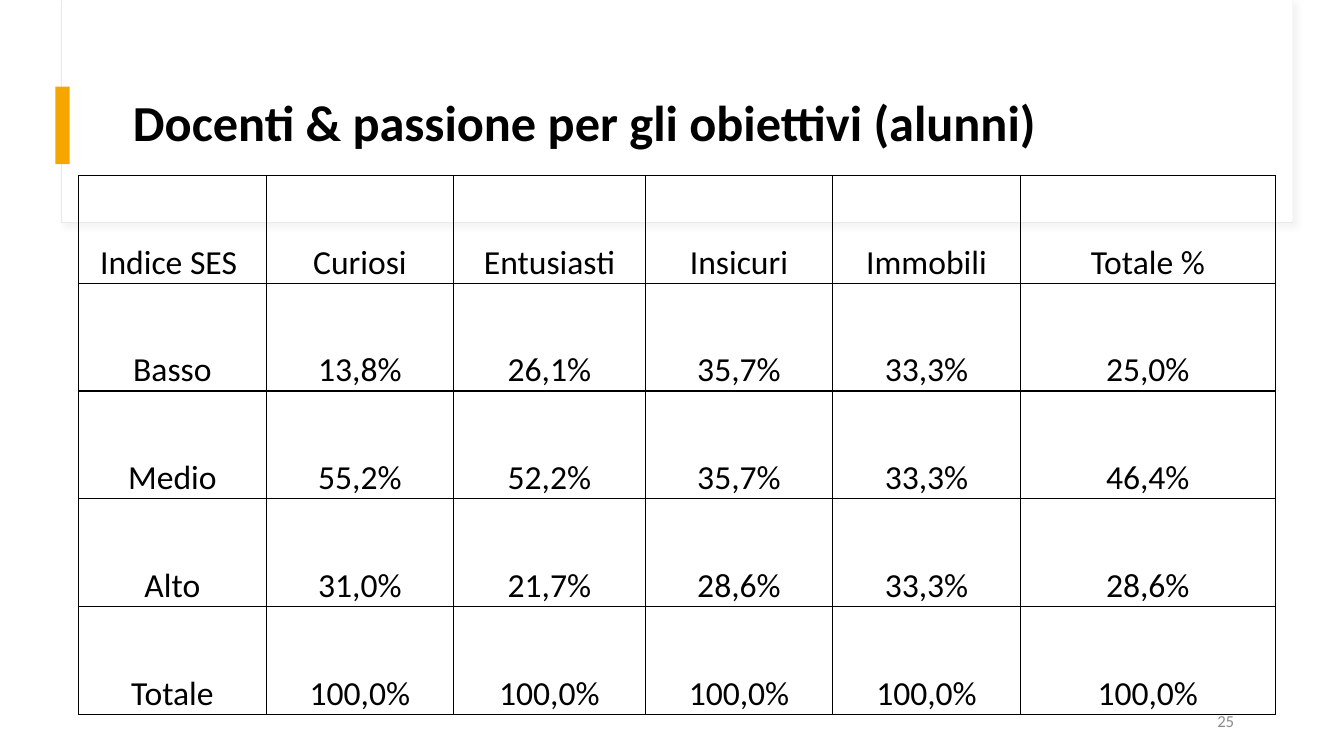
from lxml import etree
from pptx import Presentation
from pptx.dml.color import RGBColor
from pptx.enum.shapes import MSO_SHAPE as Shape
from pptx.enum.text import MSO_ANCHOR as Anchor, PP_ALIGN as Align
from pptx.oxml import parse_xml
from pptx.oxml.ns import nsdecls, qn
from pptx.util import Inches, Pt

FONT = "Calibri"
BLACK = RGBColor(0x00, 0x00, 0x00)
WHITE = RGBColor(0xFF, 0xFF, 0xFF)
CARD_LINE = RGBColor(0xE9, 0xE9, 0xE9)
SHADOW = RGBColor(0xD9, 0xD9, 0xD9)
AMBER = RGBColor(0xF5, 0xA7, 0x00)
GREY = RGBColor(0x8C, 0x8C, 0x8C)

COLUMN_WIDTHS = [1.86, 1.86, 1.9, 1.86, 1.86, 2.53]
ROW_HEIGHT = 1.07
ROWS = [
    ["Indice SES ", "Curiosi", "Entusiasti", "Insicuri", "Immobili", "Totale %"],
    ["Basso", "13,8%", "26,1%", "35,7%", "33,3%", "25,0%"],
    ["Medio", "55,2%", "52,2%", "35,7%", "33,3%", "46,4%"],
    ["Alto", "31,0%", "21,7%", "28,6%", "33,3%", "28,6%"],
    ["Totale"] + ["100,0%"] * 5,
]


def style_text(para, text, size, color, bold=False, align=Align.LEFT):
    para.text = text
    para.alignment = align
    para.font.name = FONT
    para.font.size = Pt(size)
    para.font.bold = bold
    para.font.color.rgb = color


def add_rectangle(page, left, top, width, height, fill, line=None):
    box = page.shapes.add_shape(
        Shape.RECTANGLE, Inches(left), Inches(top), Inches(width), Inches(height))
    box.shadow.inherit = False
    box.fill.solid()
    box.fill.fore_color.rgb = fill
    if line is None:
        box.line.fill.background()
    else:
        box.line.color.rgb = line
        box.line.width = Pt(0.75)
    return box


def add_label(page, left, top, width, height, *text_style, **options):
    box = page.shapes.add_textbox(
        Inches(left), Inches(top), Inches(width), Inches(height))
    frame = box.text_frame
    frame.word_wrap = True
    frame.vertical_anchor = Anchor.MIDDLE
    style_text(frame.paragraphs[0], *text_style, **options)
    return frame.paragraphs[0]


def add_soft_shadow(box):
    effects = box._element.spPr.find(qn("a:effectLst"))
    effects.append(parse_xml(
        f'<a:outerShdw {nsdecls("a")} blurRad="{Pt(4)}" dist="{Pt(3)}" '
        f'dir="2700000" algn="tl" rotWithShape="0"><a:srgbClr val="{SHADOW}">'
        '<a:alpha val="30000"/></a:srgbClr></a:outerShdw>'))


def add_header(page, left, top, width, height):
    # Card with a soft shadow, and its plain white face
    card = add_rectangle(page, left, top, width, height, WHITE, CARD_LINE)
    add_soft_shadow(card)
    add_rectangle(page, left + 0.01, top, width - 0.01, height - 0.01, WHITE)
    # Accent bar and title
    add_rectangle(page, left - 0.06, top + 0.86, 0.14, 0.77, AMBER)
    title = add_label(page, left + 0.61, top + 0.6, 11.12, 1.29,
                      "Docenti & passione per gli obiettivi (alunni)", 36, BLACK, bold=True)
    title.line_spacing = 0.9


def add_borders(cell):
    properties = cell._tc.get_or_add_tcPr()
    for index, side in enumerate(("lnL", "lnR", "lnT", "lnB")):
        border = etree.Element(qn(f"a:{side}"), w=str(Pt(1)))
        fill = etree.SubElement(border, qn("a:solidFill"))
        etree.SubElement(fill, qn("a:srgbClr"), val=str(BLACK))
        properties.insert(index, border)


def add_results_table(page, left, top):
    table = page.shapes.add_table(
        len(ROWS), len(COLUMN_WIDTHS), Inches(left), Inches(top),
        Inches(sum(COLUMN_WIDTHS)), Inches(ROW_HEIGHT * len(ROWS))).table
    table.first_row = False
    table.horz_banding = False
    for column, width in zip(table.columns, COLUMN_WIDTHS):
        column.width = Inches(width)
    for row, texts in zip(table.rows, ROWS):
        row.height = Inches(ROW_HEIGHT)
        for cell, text in zip(row.cells, texts):
            cell.fill.background()
            cell.vertical_anchor = Anchor.BOTTOM
            cell.margin_left = cell.margin_right = Inches(0.06)
            cell.margin_top = cell.margin_bottom = 0
            para = cell.text_frame.paragraphs[0]
            style_text(para, text, 24, BLACK, align=Align.CENTER)
            para.line_spacing = 1.07
            para.space_after = Pt(8)
            add_borders(cell)


def main():
    deck = Presentation()
    deck.slide_width = Inches(13.33)
    deck.slide_height = Inches(7.5)
    page = deck.slides.add_slide(deck.slide_layouts[6])
    add_header(page, 0.61, 0, 12.21, 2.21)
    add_results_table(page, 0.78, 1.74)
    # Page number
    add_label(page, 9.34, 6.95, 3, 0.4, "25", 12, GREY, align=Align.RIGHT)
    deck.save("out.pptx")


if __name__ == "__main__":
    main()
